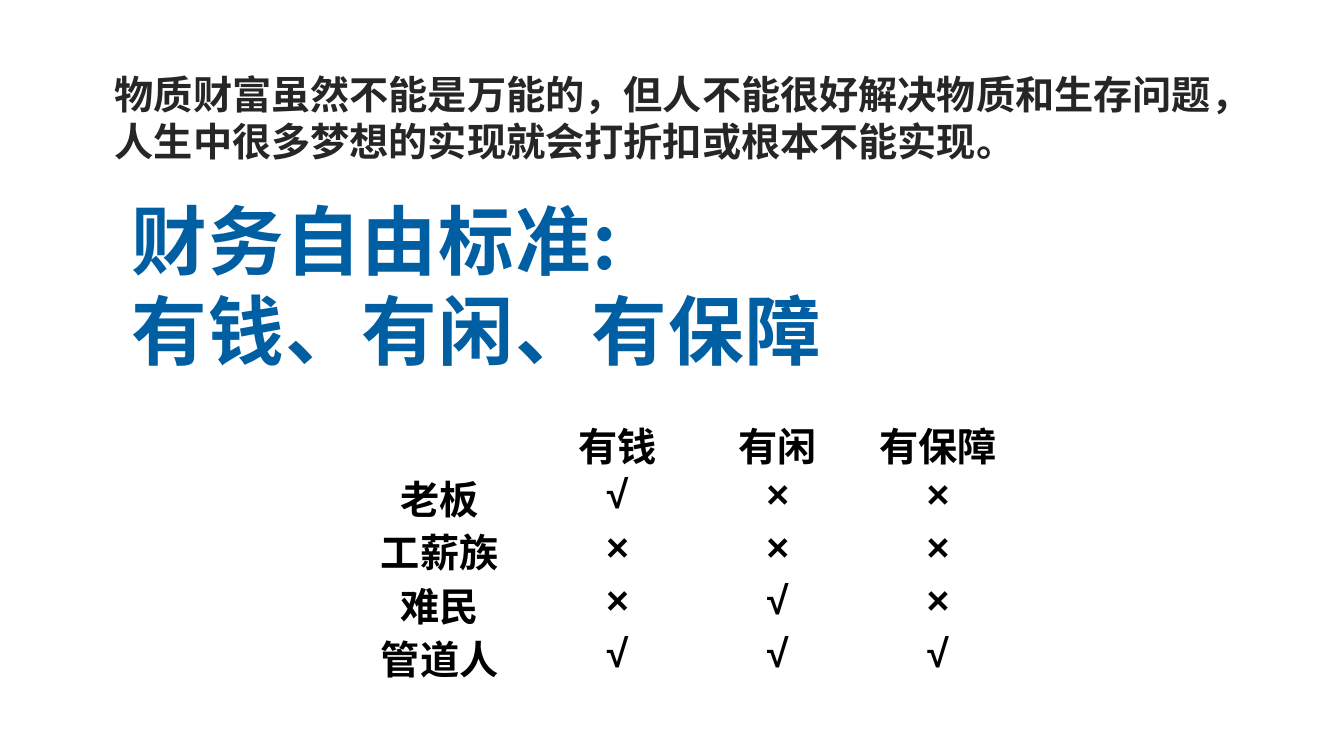
import pptx
import pptx.util
import pptx.dml.color
import pptx.enum.text
import pptx.oxml
import pptx.oxml.ns

THEME = {
    "cjk": "Noto Sans CJK SC", "body": "Calibri", "table": "Arial",
    "ink": "262626", "black": "000000",
    "title_stops": [(0, "004272"), (50, "005EA2"), (100, "0070C0")],
    "title_size": 54, "text_size": 28,
}
PX = 9144  # 100 px to the inch


def px(n):
    return pptx.util.Emu(n * PX)


def add_run(p, text, size, font, color=None):
    """Add a bold run with one typeface for Latin and one for Chinese text."""
    r = p.add_run()
    r.text = text
    r.font.size = pptx.util.Pt(size)
    r.font.bold = True
    if color:
        r.font.color.rgb = pptx.dml.color.RGBColor.from_string(color)
    r.font.name = font
    ea = pptx.oxml.parse_xml(
        f'<a:ea {pptx.oxml.ns.nsdecls("a")} typeface="{THEME["cjk"]}"/>')
    r.font._element.append(ea)
    return r


prs = pptx.Presentation()
prs.slide_width, prs.slide_height = px(1333), px(750)
s = prs.slides.add_slide(prs.slide_layouts[6])

# Title
tf = s.shapes.add_textbox(px(121), px(187), px(1111), px(192)).text_frame
tf.word_wrap = True
stops = "".join(f'<a:gs pos="{pos * 1000}"><a:srgbClr val="{color}"/></a:gs>'
                for pos, color in THEME["title_stops"])
for i, line in enumerate(["财务自由标准:", "有钱、有闲、有保障"]):
    p = tf.add_paragraph() if i else tf.paragraphs[0]
    r = add_run(p, line, THEME["title_size"], THEME["cjk"])
    r.font._element.set("spc", "80")
    r.font._element.insert(0, pptx.oxml.parse_xml(
        f'<a:gradFill {pptx.oxml.ns.nsdecls("a")}><a:gsLst>{stops}</a:gsLst>'
        '<a:lin ang="16200000" scaled="0"/></a:gradFill>'))

# Introduction
tf = s.shapes.add_textbox(px(104), px(65), px(1144), px(104)).text_frame
tf.word_wrap = True
add_run(tf.paragraphs[0],
        "物质财富虽然不能是万能的，但人不能很好解决物质和生存问题，"
        "人生中很多梦想的实现就会打折扣或根本不能实现。",
        THEME["text_size"], THEME["body"], THEME["ink"])

# Comparison table
rows = [
    ["", "有钱", "有闲", "有保障"],
    ["老板", "√", "×", "×"],
    ["工薪族", "×", "×", "×"],
    ["难民", "×", "√", "×"],
    ["管道人", "√", "√", "√"],
]
col_widths = [194, 159, 159, 159]
row_heights = [48, 48, 53, 48, 48]
table = s.shapes.add_table(len(rows), len(col_widths), px(339), px(412),
                           px(sum(col_widths)), px(sum(row_heights))).table
table.first_row = table.horz_banding = False
# "No Style, No Grid"
table._tbl.tblPr.find(pptx.oxml.ns.qn("a:tableStyleId")).text = \
    "{2D5ABB26-0587-4C30-8999-92F81FD0307C}"
for col, width in zip(table.columns, col_widths):
    col.width = px(width)
for i, (height, texts) in enumerate(zip(row_heights, rows)):
    table.rows[i].height = px(height)
    for j, text in enumerate(texts):
        cell = table.cell(i, j)
        cell.fill.background()
        cell.vertical_anchor = pptx.enum.text.MSO_ANCHOR.BOTTOM
        cell.margin_left = cell.margin_right = cell.margin_top = px(1)
        cell.margin_bottom = px(5)
        p = cell.text_frame.paragraphs[0]
        p.alignment = pptx.enum.text.PP_ALIGN.CENTER
        if text:
            add_run(p, text, THEME["text_size"], THEME["table"], THEME["black"])

prs.save("out.pptx")
